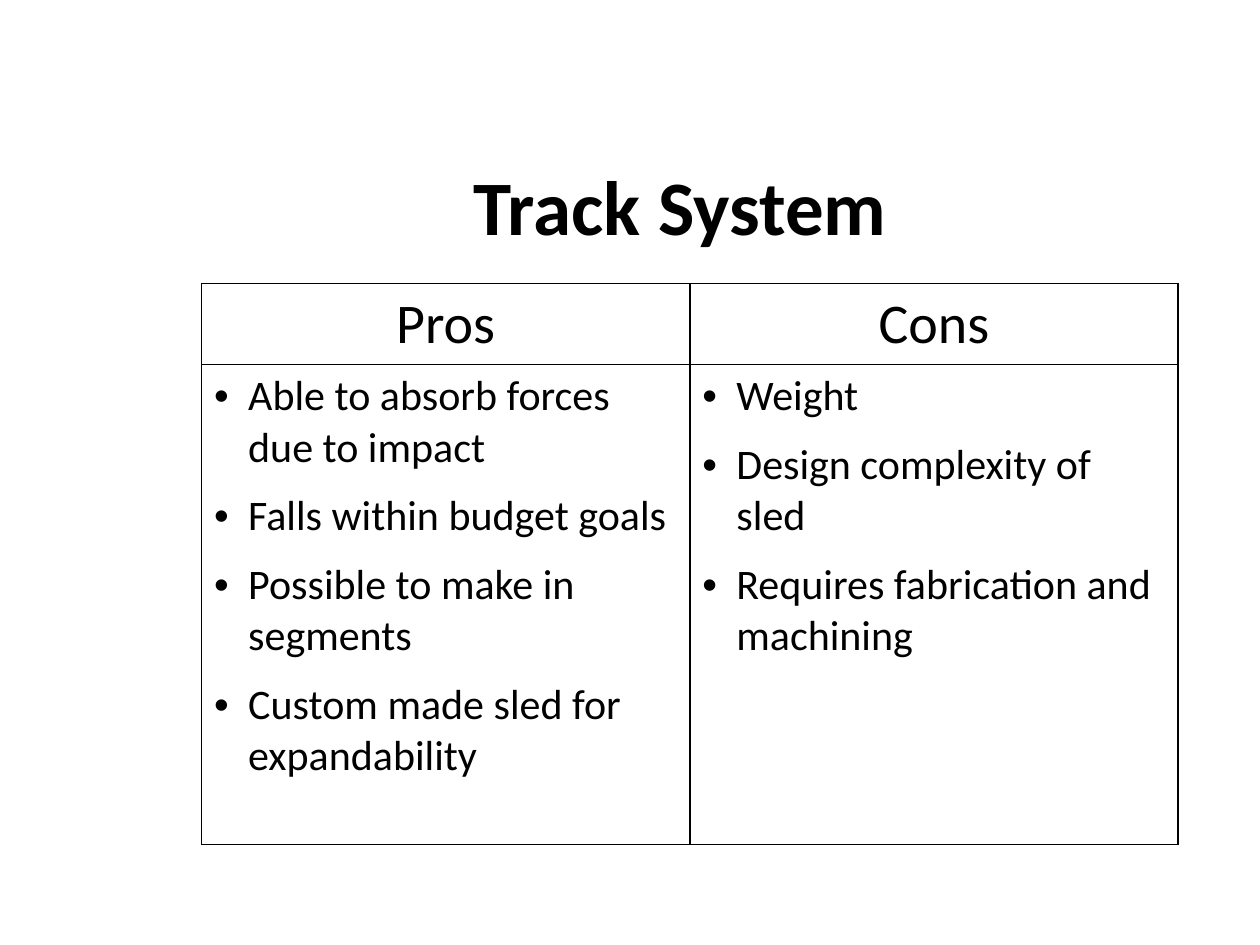
import pptx
import pptx.util
import pptx.dml.color
import pptx.enum.text
import pptx.oxml
import pptx.oxml.ns

INK = "000000"
PROS = [
    ["Able to absorb forces", "due to impact"],
    ["Falls within budget goals"],
    ["Possible to make in", "segments"],
    ["Custom made sled for", "expandability"],
]
CONS = [
    ["Weight"],
    ["Design complexity of", "sled"],
    ["Requires fabrication and", "machining"],
]


def color(value):
    return pptx.dml.color.RGBColor.from_string(value)


class ComparisonSlide:
    font = "Calibri"
    center = pptx.enum.text.PP_ALIGN.CENTER
    middle = pptx.enum.text.MSO_ANCHOR.MIDDLE
    bullet_indent = pptx.util.Inches(0.27)

    def __init__(self, deck):
        self.width, self.height = deck.slide_width, deck.slide_height
        self.slide = deck.slides.add_slide(deck.slide_layouts[6])

    def box(self, left, top, width, height):
        return (int(left * self.width), int(top * self.height),
                int(width * self.width), int(height * self.height))

    def add_lines(self, paragraph, lines, size, bold=False):
        for number, line in enumerate(lines):
            if number:
                paragraph.add_line_break()
            run = paragraph.add_run()
            run.text = line
            run.font.name = self.font
            run.font.size = pptx.util.Pt(size)
            run.font.bold = bold
            run.font.color.rgb = color(INK)

    def title(self, words, *place):
        frame = self.slide.shapes.add_textbox(*self.box(*place)).text_frame
        frame.word_wrap = True
        frame.vertical_anchor = self.middle
        heading = frame.paragraphs[0]
        heading.alignment = self.center
        self.add_lines(heading, [words], 44, bold=True)

    def bullets(self, cell, points):
        frame = cell.text_frame
        for number, lines in enumerate(points):
            point = frame.add_paragraph() if number else frame.paragraphs[0]
            properties = point._p.get_or_add_pPr()
            properties.set("marL", str(self.bullet_indent))
            properties.set("indent", str(-self.bullet_indent))
            point.space_after = pptx.util.Pt(10)
            properties.append(pptx.oxml.parse_xml(
                f'<a:buFont {pptx.oxml.ns.nsdecls("a")} typeface="Arial"/>'))
            properties.append(pptx.oxml.parse_xml(
                f'<a:buChar {pptx.oxml.ns.nsdecls("a")} char="•"/>'))
            self.add_lines(point, lines, 24)

    def outline(self, cell):
        properties = cell._tc.get_or_add_tcPr()
        for side in ("lnL", "lnR", "lnT", "lnB"):
            properties.append(pptx.oxml.parse_xml(
                f'<a:{side} {pptx.oxml.ns.nsdecls("a")} w="{pptx.util.Pt(1)}">'
                f'<a:solidFill><a:srgbClr val="{INK}"/></a:solidFill></a:{side}>'))
        cell.fill.background()

    def comparison(self, columns, row_shares, *place):
        table = self.slide.shapes.add_table(
            len(row_shares), len(columns), *self.box(*place)).table
        table.first_row = table.horz_banding = False
        for row, share in zip(table.rows, row_shares):
            row.height = int(share * self.height)
        for number, (label, points) in enumerate(columns.items()):
            header, body = table.cell(0, number), table.cell(1, number)
            heading = header.text_frame.paragraphs[0]
            heading.alignment = self.center
            self.add_lines(heading, [label], 32)
            self.bullets(body, points)
            self.outline(header)
            self.outline(body)


def main():
    deck = pptx.Presentation()
    deck.slide_width = pptx.util.Inches(10)
    deck.slide_height = pptx.util.Inches(7.5)
    track = ComparisonSlide(deck)
    row_shares = (0.64 / 7.5, 3.81 / 7.5)
    track.comparison({"Pros": PROS, "Cons": CONS}, row_shares,
                     0.16, 0.3, 0.775, sum(row_shares))
    track.title("Track System", 0.09, 1 / 7.5, 0.9, 1 / 6)
    deck.save("out.pptx")


if __name__ == "__main__":
    main()
